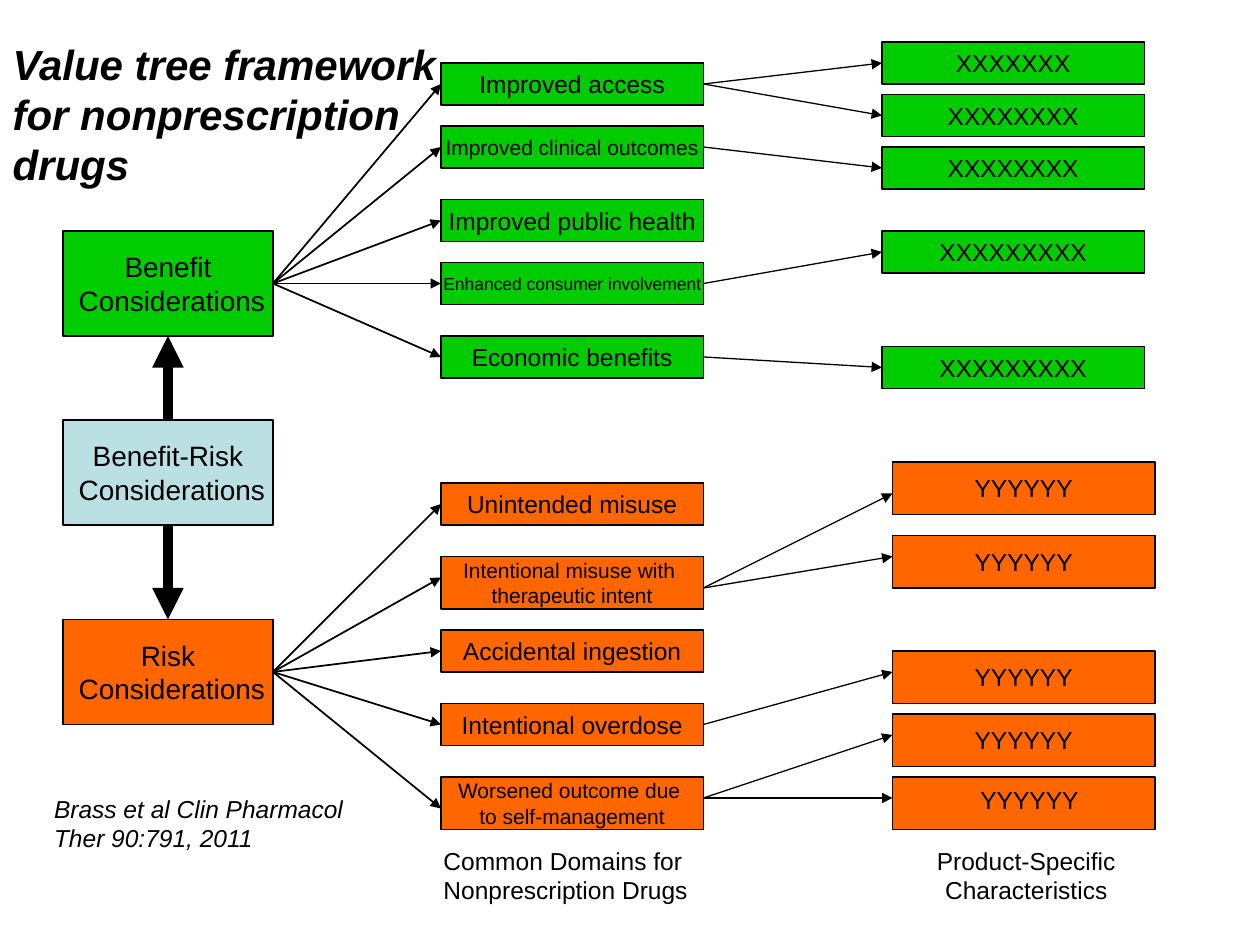
import pptx
import pptx.util
import pptx.dml.color
import pptx.enum.shapes
import pptx.enum.text
import pptx.oxml
import pptx.oxml.ns
from lxml import etree

Cm = pptx.util.Cm
Pt = pptx.util.Pt
PP_ALIGN = pptx.enum.text.PP_ALIGN
MSO_ANCHOR = pptx.enum.text.MSO_ANCHOR
qn = pptx.oxml.ns.qn
COLORS = {"black": "000000", "benefit": "00CC00", "risk": "FF6600", "center": "BBE0E3"}
RGB = {name: pptx.dml.color.RGBColor.from_string(c) for name, c in COLORS.items()}
UNIT = 2.54 / 12


def write(sp, text, size, align, anchor, bold=False, italic=False):
    tf = sp.text_frame
    tf.text = text
    tf.word_wrap = False
    tf.vertical_anchor = anchor
    for p in tf.paragraphs:
        p.alignment = align
        for r in p.runs:
            r.font.name = "Arial"
            r.font.size = Pt(size)
            r.font.bold = bold
            r.font.italic = italic
            r.font.color.rgb = RGB["black"]


def grid(*values):
    return [Cm(v * UNIT) for v in values]


prs = pptx.Presentation()
prs.slide_width = Cm(25.4)
prs.slide_height = Cm(19.05)
s = prs.slides.add_slide(prs.slide_layouts[5])

title = s.shapes.title
title.left, title.top, title.width, title.height = Cm(0), Cm(0.64), Cm(9.07), Cm(3.3)
write(title, "Value tree framework\nfor nonprescription\ndrugs", 24,
      PP_ALIGN.LEFT, MSO_ANCHOR.TOP, bold=True, italic=True)
title.text_frame.auto_size = pptx.enum.text.MSO_AUTO_SIZE.SHAPE_TO_FIT_TEXT

considerations = [
    (40, "center", "Benefit-Risk\n Considerations"),
    (22, "benefit", "Benefit\n Considerations"),
    (59, "risk", "Risk\n Considerations"),
]
domains = [
    (6, 4, "benefit", "Improved access", 14),
    (12, 4, "benefit", "Improved clinical outcomes", 12),
    (19, 4, "benefit", "Improved public health", 14),
    (25, 4, "benefit", "Enhanced consumer involvement", 10),
    (32, 4, "benefit", "Economic benefits", 14),
    (46, 4, "risk", "Unintended misuse", 14),
    (53, 5, "risk", "Intentional misuse with \ntherapeutic intent", 12),
    (60, 4, "risk", "Accidental ingestion", 14),
    (67, 4, "risk", "Intentional overdose", 14),
    (74, 5, "risk", "Worsened outcome due \nto self-management", 12),
]
benefit_traits = [(4, 7), (9, 8), (14, 8), (22, 9), (33, 9)]
risk_traits = [(44, 6), (51, 6), (62, 6), (68, 6), (74, 0)]

boxes = [(6, y, 20, 10, color, text, 16) for y, color, text in considerations]
boxes += [(42, y, 25, h, color, text, size) for y, h, color, text, size in domains]
boxes += [(84, y, 25, 4, "benefit", "X" * n, 14) for y, n in benefit_traits]
boxes += [(85, y, 25, 5, "risk", "Y" * n, 14) for y, n in risk_traits]
for x, y, w, h, color, text, size in boxes:
    sp = s.shapes.add_shape(pptx.enum.shapes.MSO_SHAPE.RECTANGLE, *grid(x, y, w, h))
    sp.shadow.inherit = False
    sp.fill.solid()
    sp.fill.fore_color.rgb = RGB[color]
    sp.line.color.rgb = RGB["black"]
    sp.line.width = Pt(0.75)
    if text:
        write(sp, text, size, PP_ALIGN.CENTER, MSO_ANCHOR.MIDDLE)

arrows = [(16, 40, 16, 32, 6), (16, 50, 16, 59, 6)]
arrows += [(26, 27, 42, y, 1) for y in (8, 14, 21, 27, 34)]
arrows += [(26, 64, 42, y, 1) for y in (48, 55, 62, 69, 77)]
arrows += [(67, a, 84, b, 0.75) for a, b in ((8, 6), (8, 11), (14, 16), (27, 24), (34, 35))]
arrows += [(67, a, 85, b, 0.75) for a, b in ((56, 47), (56, 53), (69, 64), (76, 70), (76, 76))]
for x1, y1, x2, y2, width in arrows:
    line = s.shapes.add_connector(pptx.enum.shapes.MSO_CONNECTOR.STRAIGHT, *grid(x1, y1, x2, y2))
    line.line.color.rgb = RGB["black"]
    line.line.width = Pt(width)
    etree.SubElement(line.line._get_or_add_ln(), qn("a:tailEnd"), type="triangle")
    etree.SubElement(line._element.spPr, qn("a:effectLst"))

labels = [
    (8.69, 16.93, 5.44, 1.45, "Common Domains for\nNonprescription Drugs", PP_ALIGN.LEFT, False),
    (18.62, 16.93, 4.14, 1.45, "Product-Specific\nCharacteristics", PP_ALIGN.CENTER, False),
    (19.51, 15.7, 2.49, 0.84, "YYYYYY", PP_ALIGN.CENTER, False),
    (0.84, 15.88, 6.38, 1.45, "Brass et al Clin Pharmacol\nTher 90:791, 2011", PP_ALIGN.LEFT, True),
]
for x, y, w, h, text, align, italic in labels:
    tb = s.shapes.add_textbox(Cm(x), Cm(y), Cm(w), Cm(h))
    write(tb, text, 14, align, MSO_ANCHOR.TOP, italic=italic)
    tb.text_frame.auto_size = pptx.enum.text.MSO_AUTO_SIZE.SHAPE_TO_FIT_TEXT

prs.save("out.pptx")
